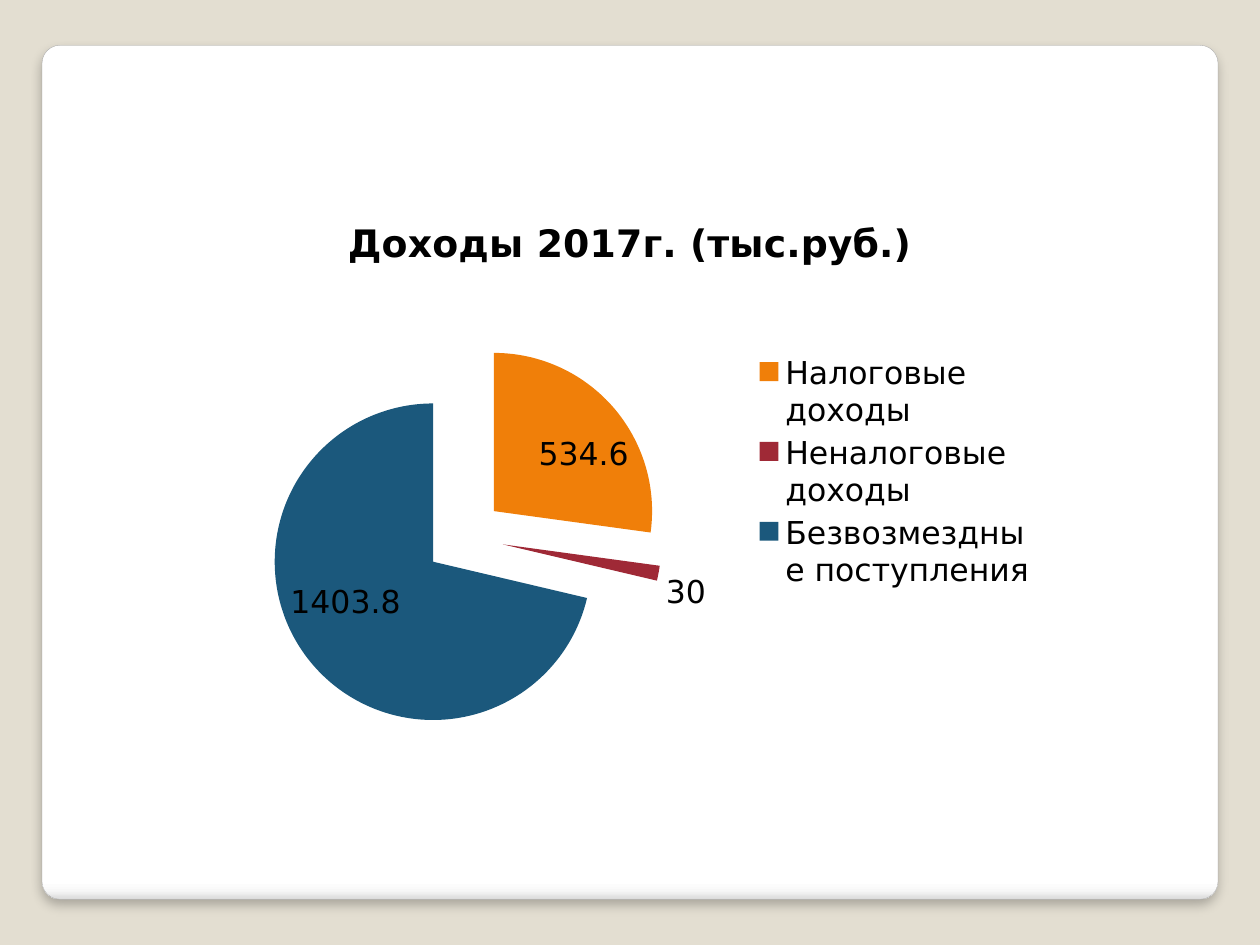
from lxml import etree
from pptx import Presentation
from pptx.chart.data import CategoryChartData
from pptx.dml.color import RGBColor
from pptx.enum.chart import XL_CHART_TYPE, XL_LABEL_POSITION, XL_LEGEND_POSITION
from pptx.enum.shapes import MSO_SHAPE
from pptx.oxml import parse_xml
from pptx.util import Pt

PIE = XL_CHART_TYPE.PIE
BEST_FIT = XL_LABEL_POSITION.BEST_FIT
RIGHT = XL_LEGEND_POSITION.RIGHT
ROUNDED = MSO_SHAPE.ROUNDED_RECTANGLE
FONT = "DejaVu Sans"
NS = 'xmlns:a="http://schemas.openxmlformats.org/drawingml/2006/main"'
COLORS = {
    "background": "E3DED1", "border": "A4A4A4", "shadow": "000000", "text": "000000",
    "tax": "F07F09", "non_tax": "9F2936", "grants": "1B587C",
}
PANEL_STOPS = [(0, "FFFFFF"), (98, "FFFFFF"), (99, "F7F7F7"), (100, "DADADA")]
TITLE = "Доходы 2017г. (тыс.руб.)"
INCOME = [
    ("Налоговые доходы", 534.6, "tax"),
    ("Неналоговые доходы", 30, "non_tax"),
    ("Безвозмездные поступления", 1403.8, "grants"),
]


def rgb(name):
    return RGBColor.from_string(COLORS[name])


def set_font(font, size, bold=False):
    font.name, font.size, font.bold = FONT, Pt(size), bold
    font.color.rgb = rgb("text")


prs = Presentation()
prs.slide_width, prs.slide_height = Pt(720), Pt(540)
s = prs.slides.add_slide(prs.slide_layouts[6])
s.background.fill.solid()
s.background.fill.fore_color.rgb = rgb("background")

# Rounded panel with a shaded lower edge
panel = s.shapes.add_shape(ROUNDED, Pt(24), Pt(25.9), Pt(672), Pt(488))
panel.adjustments[0] = 0.021
panel.line.color.rgb = rgb("border")
panel.line.width = Pt(0.16)
panel.fill.gradient()
panel.fill.gradient_angle = 270
stops = panel.fill._fill._gradFill.gsLst
for stop in list(stops):
    stops.remove(stop)
for pos, color in PANEL_STOPS:
    stops.append(parse_xml(f'<a:gs {NS} pos="{pos * 1000}"><a:srgbClr val="{color}"/></a:gs>'))

# Soft shadow below the panel
panel.shadow.inherit = False
effects = panel._element.spPr.find("{*}effectLst")
effects.append(etree.fromstring(
    f'<a:outerShdw {NS} blurRad="{Pt(6)}" dist="{Pt(4)}" dir="5400000" rotWithShape="0">'
    f'<a:srgbClr val="{COLORS["shadow"]}"><a:alpha val="25000"/></a:srgbClr></a:outerShdw>'))

# Exploded pie of income
data = CategoryChartData()
data.categories = [name for name, _, _ in INCOME]
data.add_series(TITLE, [value for _, value, _ in INCOME])
chart = s.shapes.add_chart(PIE, Pt(120), Pt(110), Pt(480), Pt(320), data).chart
set_font(chart.font, 18)

chart.has_title = True
chart.chart_title.include_in_layout = False
tf = chart.chart_title.text_frame
tf.text = TITLE
set_font(tf.paragraphs[0].font, 21.6, bold=True)

chart.has_legend = True
chart.legend.position = RIGHT
chart.legend.include_in_layout = False
set_font(chart.legend.font, 18)

plot = chart.plots[0]
plot.vary_by_categories = True
series = plot.series[0]
for i, (_, _, color) in enumerate(INCOME):
    fill = series.points[i].format.fill
    fill.solid()
    fill.fore_color.rgb = rgb(color)
explosion = parse_xml(
    '<c:explosion xmlns:c="http://schemas.openxmlformats.org/drawingml/2006/chart" val="25"/>')
series._element.find("{*}dPt").addprevious(explosion)

plot.has_data_labels = True
labels = plot.data_labels
labels.show_value = True
labels.position = BEST_FIT
set_font(labels.font, 18)

prs.save("out.pptx")
